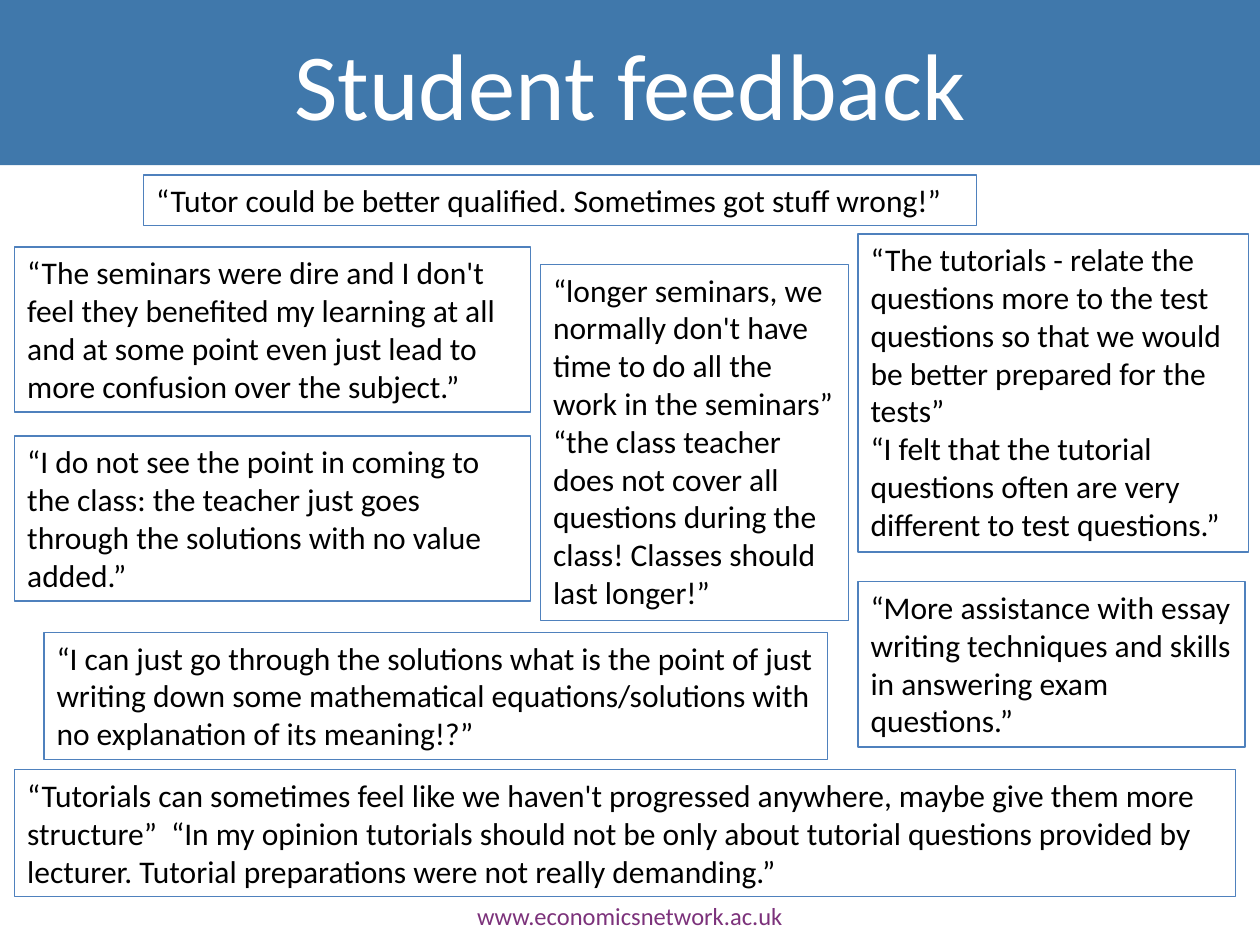
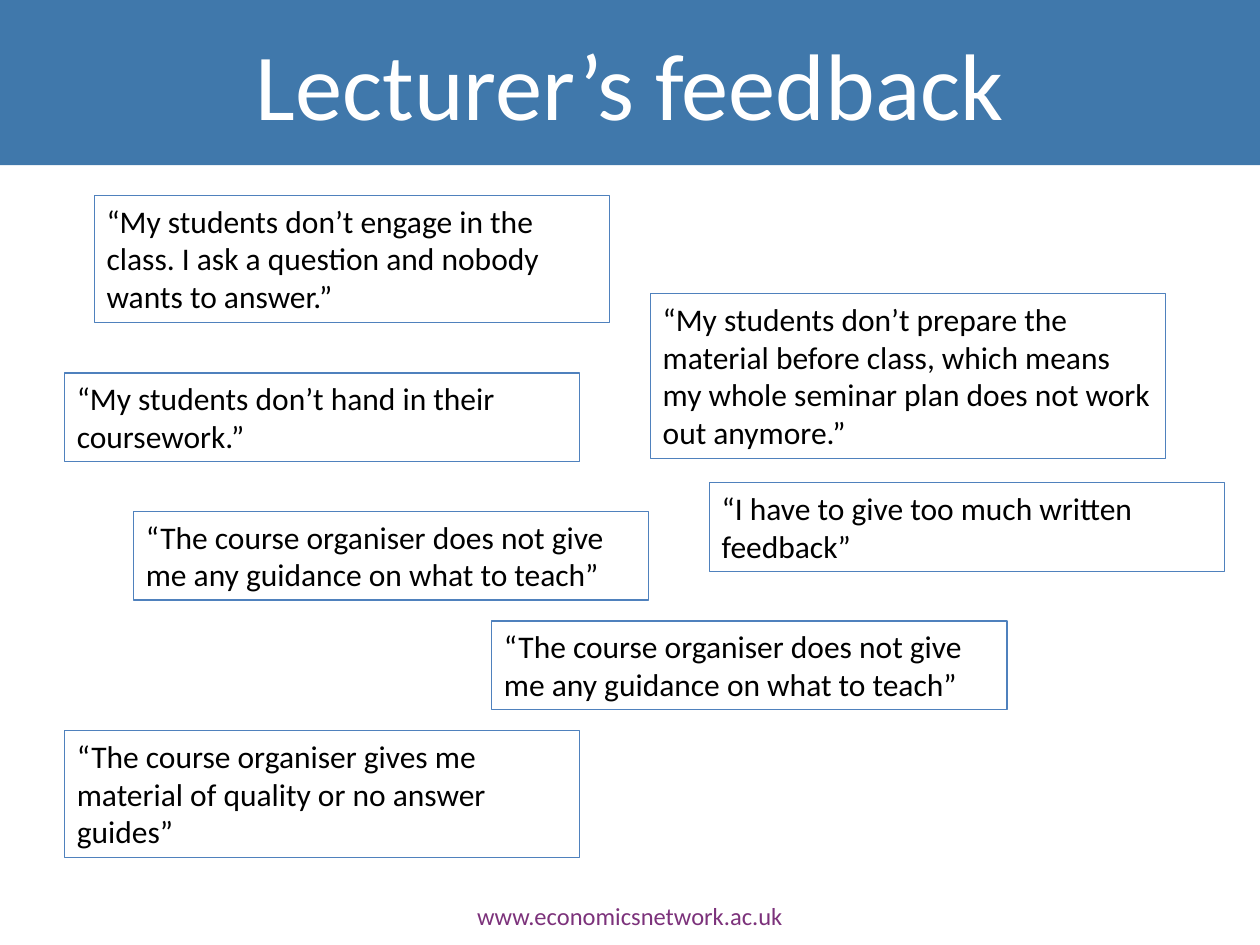
from pptx import Presentation
from pptx import util as u
from pptx.dml.color import RGBColor
from pptx.enum import shapes, text

COLOURS = {
    "band": "4078AB",
    "title": "FFFFFF",
    "footer": "7C327B",
    "outline": "4F81BD",
    "quote": "000000",
}
FONT = "Calibri"
SLIDE_WIDTH, SLIDE_HEIGHT = 25.4, 19.05
BAND_HEIGHT = 3.33
QUOTE_WIDTH = 10.39
LINE_HEIGHT, QUOTE_PADDING = 0.77, 0.25

# Each quote: left, top, width, number of lines, paragraphs
STUDENT_QUOTES = [
    (2.9, 3.53, 16.79, 1,
     ["“Tutor could be better qualified. Sometimes got stuff wrong!”"]),
    (0.3, 4.98, QUOTE_WIDTH, 4,
     ["“The seminars were dire and I don't feel they benefited my learning at all "
      "and at some point even just lead to more confusion over the subject.”"]),
    (17.3, 4.72, 7.87, 8,
     ["“The tutorials - relate the questions more to the test questions so that "
      "we would be better prepared for the tests”",
      "“I felt that the tutorial questions often are very different to test questions.”"]),
    (10.9, 5.33, 6.2, 9,
     ["“longer seminars, we normally don't have time to do all the work in the seminars”",
      "“the class teacher does not cover all questions during the class! "
      "Classes should last longer!”"]),
    (17.3, 11.73, 7.8, 4,
     ["“More assistance with essay writing techniques and skills in answering "
      "exam questions.”"]),
    (0.3, 15.52, 24.61, 3,
     ["“Tutorials can sometimes feel like we haven't progressed anywhere, maybe give "
      "them more structure”  “In my opinion tutorials should not be only about tutorial "
      "questions provided by lecturer. Tutorial preparations were not really demanding.”"]),
    (0.3, 8.79, QUOTE_WIDTH, 4,
     ["“I do not see the point in coming to the class: the teacher just goes through "
      "the solutions with no value added.”"]),
    (0.89, 12.75, 15.8, 3,
     ["“I can just go through the solutions what is the point of just writing down some "
      "mathematical equations/solutions with no explanation of its meaning!?”"]),
]

GUIDANCE = ["“The course organiser does not give", "me any guidance on what to teach”"]
LECTURER_QUOTES = [
    (1.9, 3.94, QUOTE_WIDTH, 3,
     ["“My students don’t engage in the class. I ask a question and nobody "
      "wants to answer.”"]),
    (13.11, 5.92, QUOTE_WIDTH, 4,
     ["“My students don’t prepare the material before class, which means my whole "
      "seminar plan does not work out anymore.”"]),
    (1.3, 7.52, QUOTE_WIDTH, 2, ["“My students don’t hand in their\ncoursework.”"]),
    (14.3, 9.73, QUOTE_WIDTH, 2, ["“I have to give too much written feedback”"]),
    (2.69, 10.31, QUOTE_WIDTH, 2, GUIDANCE),
    (9.91, 12.52, QUOTE_WIDTH, 2, GUIDANCE),
    (1.3, 14.73, QUOTE_WIDTH, 3,
     ["“The course organiser gives me material of quality or no answer guides”"]),
]


def colour(name):
    return RGBColor.from_string(COLOURS[name])


def write(shape, paragraphs, size, colour_name, align=text.PP_ALIGN.LEFT):
    frame = shape.text_frame
    frame.word_wrap = True
    for index, words in enumerate(paragraphs):
        para = frame.add_paragraph() if index else frame.paragraphs[0]
        para.text = words
        para.alignment = align
        para.font.name = FONT
        para.font.size = u.Pt(size)
        para.font.color.rgb = colour(colour_name)


def add_title(page, title):
    band = page.shapes.add_shape(shapes.MSO_SHAPE.RECTANGLE, 0, 0,
                                 u.Cm(SLIDE_WIDTH), u.Cm(BAND_HEIGHT))
    band.shadow.inherit = False
    band.fill.solid()
    band.fill.fore_color.rgb = colour("band")
    band.line.fill.background()
    band.text_frame.vertical_anchor = text.MSO_ANCHOR.MIDDLE
    write(band, [title], 54, "title", text.PP_ALIGN.CENTER)


def add_footer(page):
    box = page.shapes.add_textbox(0, u.Cm(18.03), u.Cm(SLIDE_WIDTH), u.Cm(0.86))
    write(box, ["www.economicsnetwork.ac.uk"], 14, "footer", text.PP_ALIGN.CENTER)


def add_quote(page, left, top, width, lines, paragraphs):
    height = QUOTE_PADDING + LINE_HEIGHT * lines
    box = page.shapes.add_textbox(u.Cm(left), u.Cm(top), u.Cm(width), u.Cm(height))
    box.line.color.rgb = colour("outline")
    box.line.width = u.Pt(0.75)
    box.text_frame.auto_size = text.MSO_AUTO_SIZE.SHAPE_TO_FIT_TEXT
    write(box, paragraphs, 18, "quote")


def add_feedback_page(deck, title, quotes):
    page = deck.slides.add_slide(deck.slide_layouts[6])
    add_title(page, title)
    add_footer(page)
    for quote in quotes:
        add_quote(page, *quote)


def main():
    deck = Presentation()
    deck.slide_width = u.Cm(SLIDE_WIDTH)
    deck.slide_height = u.Cm(SLIDE_HEIGHT)
    add_feedback_page(deck, "Student feedback", STUDENT_QUOTES)
    add_feedback_page(deck, "Lecturer’s feedback", LECTURER_QUOTES)
    deck.save("out.pptx")


if __name__ == "__main__":
    main()
